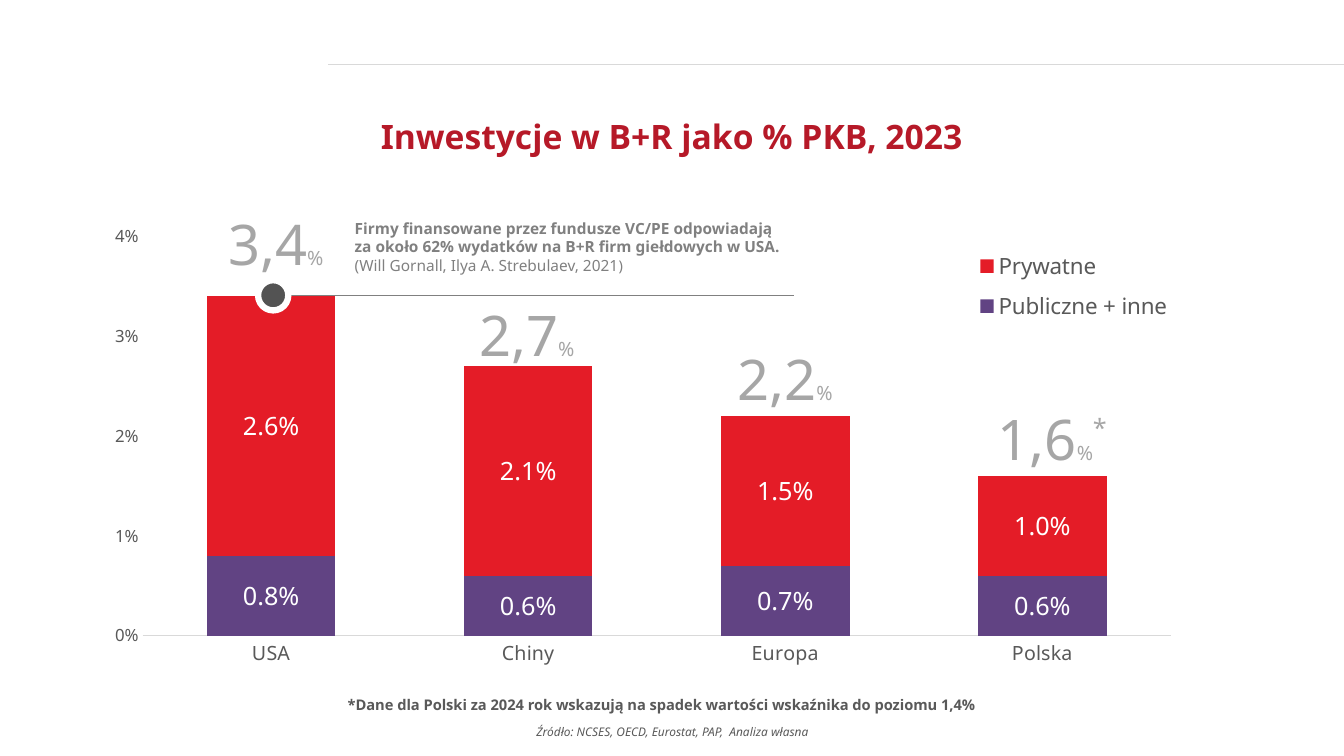
from lxml.etree import SubElement
from pptx import Presentation
from pptx.chart.data import CategoryChartData
from pptx.dml.color import RGBColor
from pptx.enum.chart import XL_CHART_TYPE, XL_LEGEND_POSITION, XL_TICK_MARK
from pptx.enum.shapes import MSO_CONNECTOR, MSO_SHAPE
from pptx.enum.text import MSO_ANCHOR, PP_ALIGN
from pptx.oxml import parse_xml
from pptx.oxml.ns import nsdecls, qn
from pptx.util import Inches, Pt

FONT = "Noto Sans"
COLORS = {
    "title": "B61928", "text": "595959", "total": "A6A6A6", "note": "808080",
    "rule": "D9D9D9", "dot": "535353", "white": "FFFFFF",
    "private": "E41C27", "public": "614383",
}
CATS = ["USA", "Chiny", "Europa", "Polska"]
SERIES = [
    ("Publiczne + inne", "public", [0.008, 0.006, 0.007, 0.006]),
    ("Prywatne", "private", [0.026, 0.021, 0.015, 0.01]),
]
TOTALS = [
    ("3,4", 2.11, 2.11, 1.25), ("2,7", 4.6, 3.01, 1.25),
    ("2,2", 7.16, 3.45, 1.25), ("1,6", 9.67, 4.04, 1.4),
]


def color(name):
    """Return the named colour."""
    return RGBColor.from_string(COLORS[name])


def style(font, size, hue, bold=False, italic=False):
    """Set the look of a font."""
    font.name, font.size = FONT, Pt(size)
    font.bold, font.italic = bold, italic
    font.color.rgb = color(hue)


def add_box(slide, area, size, hue, align=PP_ALIGN.LEFT, wrap=True,
            bold=False, italic=False):
    """Add a styled text box and return its paragraph."""
    frame = slide.shapes.add_textbox(*map(Inches, area)).text_frame
    frame.word_wrap = wrap
    par = frame.paragraphs[0]
    par.alignment = align
    style(par.font, size, hue, bold, italic)
    return par


def add_run(par, text, size=None, bold=None):
    """Add a run with its own size or weight."""
    run = par.add_run()
    run.text = text
    if size:
        run.font.size = Pt(size)
    run.font.bold = bold


def add_total(slide, value, left, top, width):
    """Add the total above a column."""
    box = slide.shapes.add_textbox(*map(Inches, (left, top, width, 0.61)))
    frame = box.text_frame
    frame.word_wrap = True
    frame.vertical_anchor = MSO_ANCHOR.MIDDLE
    par = frame.paragraphs[0]
    par.alignment = PP_ALIGN.CENTER
    style(par.font, 40, "total")
    add_run(par, value)
    add_run(par, "%", 14)


def add_note(slide):
    """Add the remark on venture funds."""
    par = add_box(slide, (3.42, 2.12, 4.7, 0.66), 11, "note")
    for line in ("Firmy finansowane przez fundusze VC/PE odpowiadają",
                 "za około 62% wydatków na B+R firm giełdowych w USA."):
        add_run(par, line, bold=True)
        par.add_line_break()
    add_run(par, "(Will Gornall, Ilya A. Strebulaev, 2021")
    add_run(par, ")", 10.5)


def add_line(slide, start, end, hue, width):
    """Add a thin straight line."""
    line = slide.shapes.add_connector(
        MSO_CONNECTOR.STRAIGHT, *map(Inches, start + end))
    line.line.color.rgb = color(hue)
    line.line.width = Pt(width)
    SubElement(line.element.spPr, qn("a:effectLst"))


def add_dot(slide):
    """Add the ringed dot on the first column."""
    dot = slide.shapes.add_shape(
        MSO_SHAPE.OVAL, *map(Inches, (2.56, 2.78, 0.3, 0.3)))
    dot.shadow.inherit = False
    dot.fill.solid()
    dot.fill.fore_color.rgb = color("dot")
    dot.line.color.rgb = color("white")
    dot.line.width = Pt(4.5)


def place(part, index, area, inner=False):
    """Fix the place of a chart part as shares of the chart."""
    for old in part.findall(qn("c:layout")):
        part.remove(old)
    tags = '<c:layoutTarget val="inner"/>' if inner else ""
    tags += '<c:xMode val="edge"/><c:yMode val="edge"/>'
    tags += "".join(f'<c:{key} val="{val}"/>' for key, val in zip("xywh", area))
    part.insert(index, parse_xml(
        f'<c:layout {nsdecls("c")}><c:manualLayout>{tags}'
        "</c:manualLayout></c:layout>"))


def style_axes(chart):
    """Set the axes of the chart."""
    cat, val = chart.category_axis, chart.value_axis
    for axis, size in ((cat, 14), (val, 12)):
        axis.major_tick_mark = axis.minor_tick_mark = XL_TICK_MARK.NONE
        axis.has_major_gridlines = False
        style(axis.tick_labels.font, size, "text")
    cat.format.line.color.rgb = color("rule")
    cat.format.line.width = Pt(0.75)
    val.format.line.fill.background()
    val.minimum_scale, val.maximum_scale, val.major_unit = 0, 0.04, 0.01
    val.tick_labels.number_format = "0%"
    val.tick_labels.number_format_is_linked = False


def add_bars(slide):
    """Add the stacked column chart."""
    data = CategoryChartData(number_format="0.0%")
    data.categories = CATS
    for name, _, vals in SERIES:
        data.add_series(name, vals)
    chart = slide.shapes.add_chart(
        XL_CHART_TYPE.COLUMN_STACKED,
        *map(Inches, (0.78, 2.14, 11.75, 4.99)), data).chart
    style(chart.font, 10, "text")
    chart.has_title = False
    style_axes(chart)
    plot = chart.plots[0]
    plot.gap_width, plot.overlap = 100, 100
    plot.vary_by_categories = False
    for series, (_, hue, _) in zip(plot.series, SERIES):
        series.format.fill.solid()
        series.format.fill.fore_color.rgb = color(hue)
        labels = series.data_labels
        labels.show_value = True
        labels.number_format = "0.0%"
        labels.number_format_is_linked = False
        style(labels.font, 18, "white")
    chart.has_legend = True
    legend = chart.legend
    legend.position = XL_LEGEND_POSITION.RIGHT
    legend.include_in_layout = False
    style(legend.font, 16, "text")
    root = chart.element
    place(root.find(".//" + qn("c:plotArea")), 0,
          (0.054, 0.04, 0.868, 0.795), True)
    place(root.find(".//" + qn("c:legend")), 1, (0.75, 0.05, 0.18, 0.18))


def main():
    """Build the slide and save it."""
    deck = Presentation()
    deck.slide_width, deck.slide_height = Inches(13.33), Inches(7.5)
    slide = deck.slides.add_slide(deck.slide_layouts[6])
    mid = PP_ALIGN.CENTER
    add_line(slide, (13.33, 0.64), (3.25, 0.64), "rule", 0.75)
    add_run(add_box(slide, (5.17, 7.14, 3, 0.24), 8.5, "text", mid, False,
                    italic=True),
            "Źródło: NCSES, OECD, Eurostat, PAP,  Analiza własna")
    add_bars(slide)
    for total in TOTALS:
        add_total(slide, *total)
    add_note(slide)
    add_run(add_box(slide, (3.66, 1.1, 6, 0.5), 24, "title", mid, False, True),
            "Inwestycje w B+R jako % PKB, 2023")
    add_line(slide, (2.7, 2.93), (7.88, 2.93), "note", 0.5)
    add_run(add_box(slide, (3.35, 6.85, 7.81, 0.28), 10.5, "text", bold=True),
            "*Dane dla Polski za 2024 rok wskazują na spadek wartości "
            "wskaźnika do poziomu 1,4%")
    add_run(add_box(slide, (10.74, 4.04, 1.18, 0.4), 18, "total"), "*")
    add_dot(slide)
    deck.save("out.pptx")


if __name__ == "__main__":
    main()
